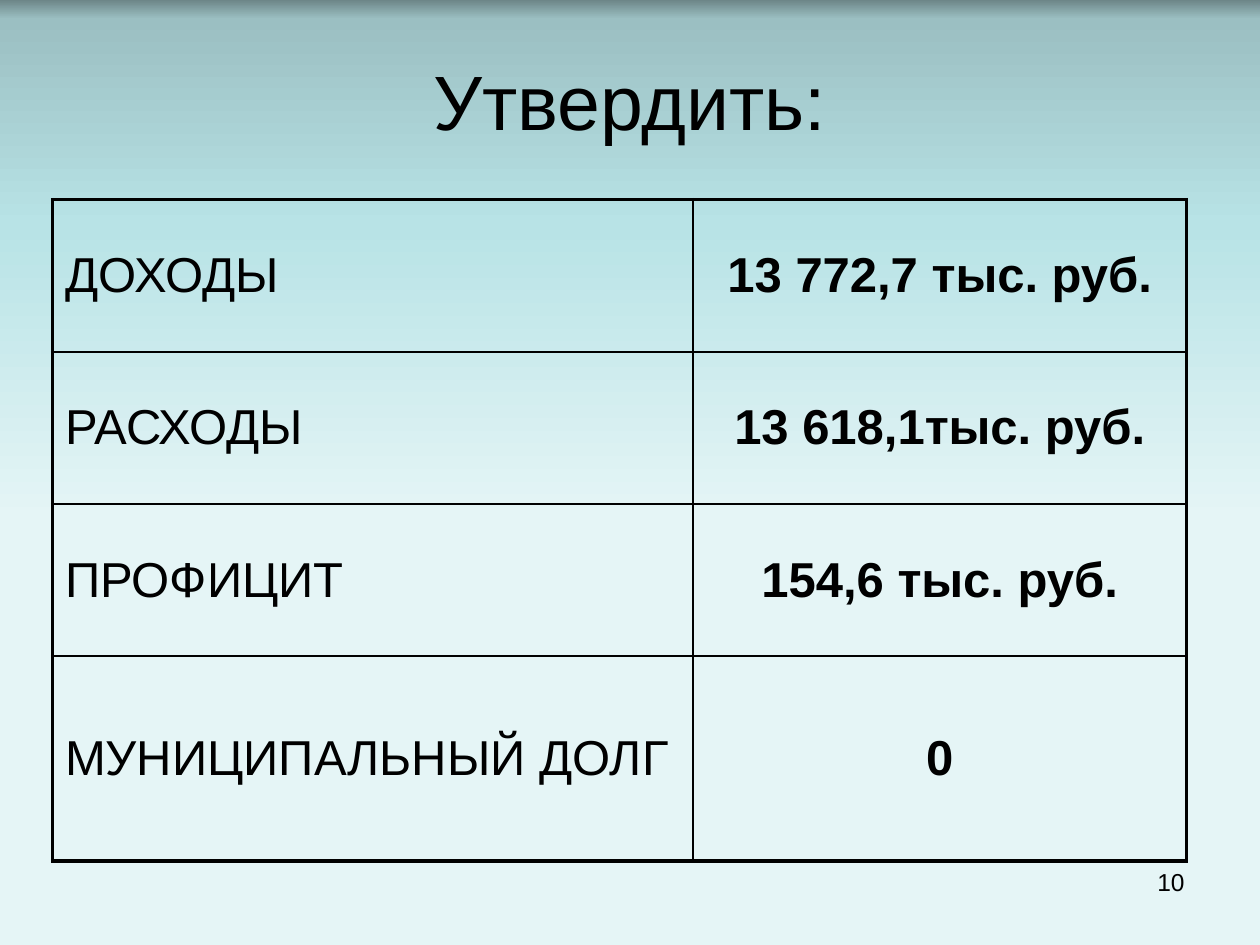
from copy import deepcopy
from dataclasses import dataclass

from lxml.etree import SubElement
from pptx import Presentation
from pptx.dml.color import RGBColor
from pptx.enum.text import MSO_ANCHOR, PP_ALIGN
from pptx.oxml.ns import qn
from pptx.util import Inches, Pt


@dataclass(frozen=True)
class Theme:
    font: str = "Arial"
    ink: str = "000000"
    title: int = 44
    body: int = 28
    number: int = 14
    inner_line: float = 1
    outer_line: float = 2.25
    # Background stops from top to bottom: position and colour
    backdrop: tuple = ((0, "6D8688"), (0.02, "9BBFC2"),
                       (0.24, "B8E3E6"), (0.55, "E5F5F6"))


class SlideBuilder:
    """Places elements on a grid of 120 columns by 90 rows."""

    COLS, ROWS = 120, 90

    def __init__(self, prs, theme):
        self.theme = theme
        self.col = prs.slide_width / self.COLS
        self.row = prs.slide_height / self.ROWS
        self.slide = prs.slides.add_slide(prs.slide_layouts[6])

    def box(self, x, y, w, h):
        return (round(x * self.col), round(y * self.row),
                round(w * self.col), round(h * self.row))

    def background(self):
        fill = self.slide.background.fill
        fill.gradient()
        fill.gradient_angle = 270
        stops = self.slide.element.find(".//" + qn("a:gsLst"))
        while len(stops) < len(self.theme.backdrop):
            stops.append(deepcopy(stops[0]))
        for stop, (position, color) in zip(fill.gradient_stops, self.theme.backdrop):
            stop.position = position
            stop.color.rgb = RGBColor.from_string(color)

    def set_text(self, tf, text, size, align, bold=False):
        p = tf.paragraphs[0]
        p.text = text
        p.alignment = align
        p.font.name = self.theme.font
        p.font.size = Pt(size)
        p.font.bold = bold
        p.font.color.rgb = RGBColor.from_string(self.theme.ink)
        return p

    def text(self, text, area, size, align, anchor=MSO_ANCHOR.TOP):
        tf = self.slide.shapes.add_textbox(*self.box(*area)).text_frame
        tf.word_wrap = True
        tf.vertical_anchor = anchor
        self.set_text(tf, text, size, align)

    def border(self, cell, side, width):
        ln = SubElement(cell._tc.get_or_add_tcPr(), qn(f"a:ln{side}"), w=str(Pt(width)))
        fill = SubElement(ln, qn("a:solidFill"))
        SubElement(fill, qn("a:srgbClr"), val=self.theme.ink)

    def table(self, data, x, y, widths, heights):
        area = self.box(x, y, sum(widths), sum(heights))
        frame = self.slide.shapes.add_table(len(heights), len(widths), *area)
        table = frame.table
        table.first_row = table.horz_banding = False
        for column, width in zip(table.columns, widths):
            column.width = round(width * self.col)
        for row, height in zip(table.rows, heights):
            row.height = round(height * self.row)
        last_row, last_col = len(heights) - 1, len(widths) - 1
        for i, values in enumerate(data):
            for j, value in enumerate(values):
                cell = table.cell(i, j)
                cell.vertical_anchor = MSO_ANCHOR.MIDDLE
                align = PP_ALIGN.CENTER if j else PP_ALIGN.LEFT
                p = self.set_text(cell.text_frame, value, self.theme.body, align, bold=j > 0)
                p.space_before = Pt(self.theme.body * 0.2)
                # Heavy lines on the outer edge, thin lines inside
                edges = {"L": j == 0, "R": j == last_col, "T": i == 0, "B": i == last_row}
                for side, outer in edges.items():
                    width = self.theme.outer_line if outer else self.theme.inner_line
                    self.border(cell, side, width)
                cell.fill.background()


def main():
    prs = Presentation()
    prs.slide_width, prs.slide_height = Inches(10), Inches(7.5)
    theme = Theme()
    s = SlideBuilder(prs, theme)
    s.background()

    # Slide number and title
    s.text("10", (86, 82, 28, 6.2), theme.number, PP_ALIGN.RIGHT)
    s.text("Утвердить:", (6, 4, 108, 11), theme.title, PP_ALIGN.CENTER, MSO_ANCHOR.MIDDLE)

    # Budget figures
    budget = [
        ("ДОХОДЫ", "13 772,7 тыс. руб."),
        ("РАСХОДЫ", "13 618,1тыс. руб."),
        ("ПРОФИЦИТ", "154,6 тыс. руб."),
        ("МУНИЦИПАЛЬНЫЙ ДОЛГ", "0"),
    ]
    s.table(budget, 5, 19, widths=(61, 47), heights=(14.5, 14.5, 14.5, 19.5))

    prs.save("out.pptx")


if __name__ == "__main__":
    main()
